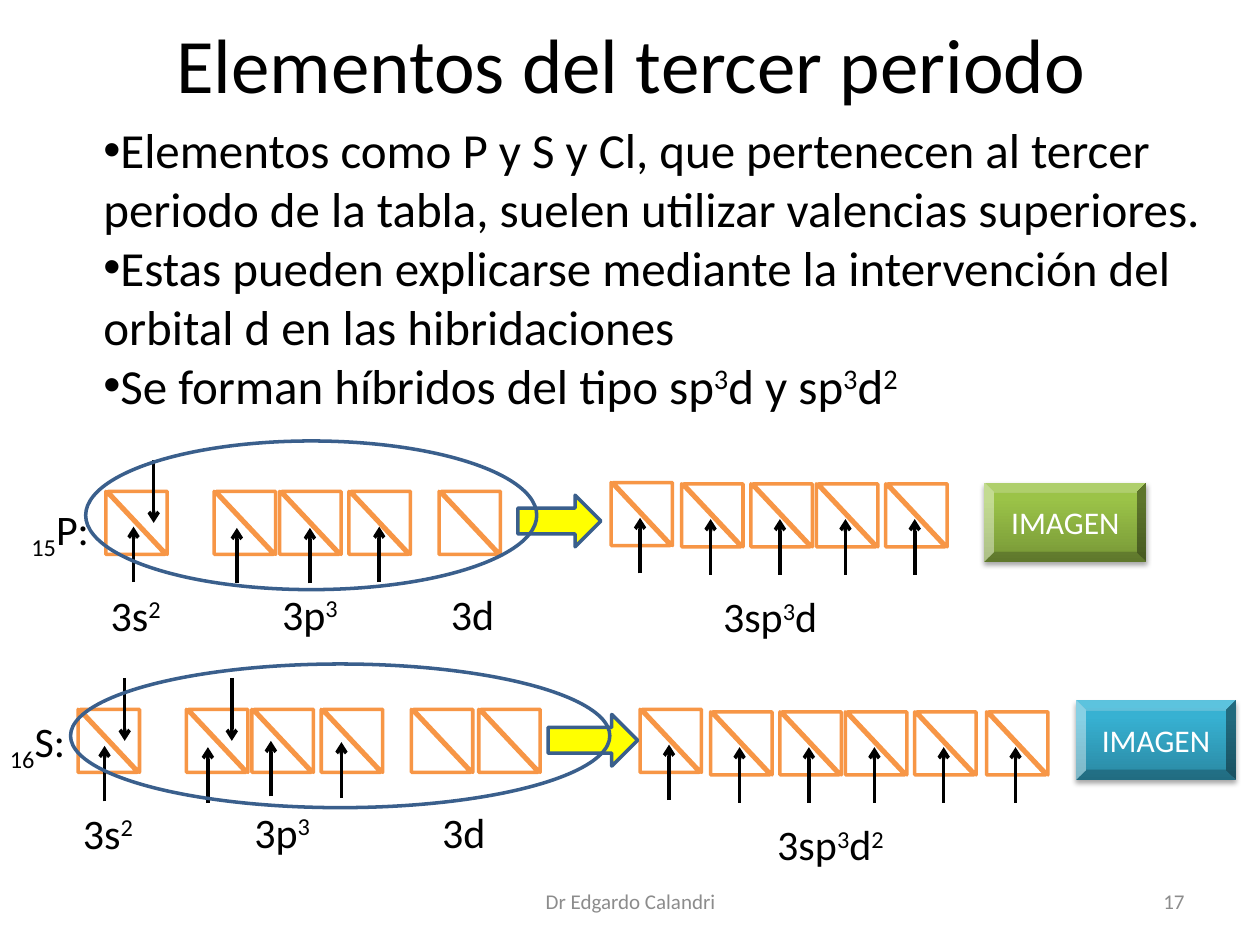
from copy import deepcopy
from dataclasses import dataclass

from lxml import etree
from pptx import Presentation
from pptx.dml.color import RGBColor
from pptx.enum.shapes import MSO_CONNECTOR, MSO_SHAPE
from pptx.enum.text import MSO_ANCHOR, MSO_AUTO_SIZE, PP_ALIGN
from pptx.oxml.ns import qn
from pptx.util import Inches, Pt

LEFT, CENTER, RIGHT = PP_ALIGN.LEFT, PP_ALIGN.CENTER, PP_ALIGN.RIGHT
TOP, MIDDLE = MSO_ANCHOR.TOP, MSO_ANCHOR.MIDDLE
FIXED = MSO_AUTO_SIZE.NONE
TRIANGLE, ELLIPSE = MSO_SHAPE.RIGHT_TRIANGLE, MSO_SHAPE.OVAL
BLOCK_ARROW, BEVEL = MSO_SHAPE.RIGHT_ARROW, MSO_SHAPE.BEVEL
STRAIGHT = MSO_CONNECTOR.STRAIGHT

# The slide is a grid of 100 columns by 75 rows
WIDTH, HEIGHT = Inches(10), Inches(7.5)
COL, ROW = WIDTH / 100, HEIGHT / 75
UP, DOWN = (7.2, 2.8), (-2.5, 2.5)  # rows where an electron starts and ends
ORBITAL_COLS = (0, 8.6, 13.8, 19.3, 26.45, 31.8)
HYBRID_COLS = (0, 5.6, 11.1, 16.3, 21.8, 27.5)


@dataclass(frozen=True)
class Theme:
    font: str = "Calibri"
    ink: str = "000000"
    muted: str = "8C8C8C"
    paper: str = "FFFFFF"
    orbital: str = "F79646"
    outline: str = "3A5F8C"
    arrow: str = "FFFF00"
    green: tuple = ("779737", "9BC348", "9DC746")
    blue: tuple = ("2A88A2", "37B1D2", "34B4D6")
    title: int = 44
    body: int = 28
    label: int = 24
    button: int = 18
    footer: int = 12
    line: int = 2


THEME = Theme()


def color(code):
    return RGBColor.from_string(code)


def cells(left, top, width, height):
    return [round(n) for n in (left * COL, top * ROW, width * COL, height * ROW)]


def place(shape, box):
    for side, length in zip(("left", "top", "width", "height"), cells(*box)):
        setattr(shape, side, length)


def write(paragraph, runs, size, ink=THEME.ink, align=LEFT):
    """Write (text, baseline percent) runs into one paragraph."""
    paragraph.alignment = align
    for text, baseline in runs:
        run = paragraph.add_run()
        run.text = text
        style = {"name": THEME.font, "size": Pt(size)}
        for key, value in style.items():
            setattr(run.font, key, value)
        run.font.color.rgb = color(ink)
        if baseline:
            run._r.get_or_add_rPr().set("baseline", str(baseline * 1000))


def set_frame(frame, **settings):
    for key, value in settings.items():
        setattr(frame, key, value)


def add_label(slide, box, runs, size=THEME.label, ink=THEME.ink,
              align=LEFT, anchor=TOP, wrap=False):
    label = slide.shapes.add_textbox(*cells(*box))
    set_frame(label.text_frame, word_wrap=wrap, vertical_anchor=anchor)
    write(label.text_frame.paragraphs[0], runs, size, ink, align)


def add_outline(shapes, kind, box, line, fill=None):
    shape = shapes.add_shape(kind, *cells(*box))
    shape.shadow.inherit = False
    shape.line.color.rgb = color(line)
    shape.line.width = Pt(THEME.line)
    if fill:
        shape.fill.solid()
        shape.fill.fore_color.rgb = color(fill)
    else:
        shape.fill.background()
    return shape


def add_orbital(slide, left, top):
    """A square cut by its diagonal, made of two right triangles."""
    group = slide.shapes.add_group_shape()
    for shift, turn in ((0, 0), (0.17, 180)):
        half = add_outline(group.shapes, TRIANGLE, (left + shift, top, 4.7, 5),
                           THEME.orbital, THEME.paper)
        half.rotation = turn


def add_electron(slide, left, top, span):
    x, start, end = round(left * COL), *(round((top + row) * ROW) for row in span)
    electron = slide.shapes.add_connector(STRAIGHT, x, start, x, end)
    electron.line.color.rgb = color(THEME.ink)
    electron.line.width = Pt(THEME.line)
    etree.SubElement(electron.line._get_or_add_ln(), qn("a:tailEnd"), type="arrow")
    etree.SubElement(electron._element.spPr, qn("a:effectLst"))


def add_button(slide, box, shades):
    button = slide.shapes.add_shape(BEVEL, *cells(*box))
    button.line.fill.background()
    button.fill.gradient()
    button.fill.gradient_angle = 90
    properties = button._element.spPr
    stops = properties.find(".//" + qn("a:gsLst"))
    stops.append(deepcopy(stops[-1]))
    for stop, shade, position in zip(button.fill.gradient_stops, shades, (0, 0.8, 1)):
        stop.color.rgb = color(shade)
        stop.position = position
    # Soft shadow below the button
    button.shadow.inherit = False
    shadow = etree.SubElement(
        properties.find(qn("a:effectLst")), qn("a:outerShdw"), blurRad=str(Pt(3.1)),
        dist=str(Pt(1.8)), dir="5400000", rotWithShape="0")
    black = etree.SubElement(shadow, qn("a:srgbClr"), val=THEME.ink)
    etree.SubElement(black, qn("a:alpha"), val="35000")
    button.text_frame.vertical_anchor = MIDDLE
    write(button.text_frame.paragraphs[0], [("IMAGEN", 0)], THEME.button, THEME.paper, CENTER)


def add_title(slide, box):
    title = slide.shapes.title
    place(title, box)
    set_frame(title.text_frame, auto_size=FIXED, vertical_anchor=MIDDLE)
    write(title.text_frame.paragraphs[0], [("Elementos del tercer periodo", 0)],
          THEME.title, align=CENTER)


def add_body(slide, box):
    body = slide.placeholders[1]
    place(body, box)
    frame = body.text_frame
    set_frame(frame, auto_size=FIXED, vertical_anchor=TOP)
    points = (
        [("Elementos como P y S y Cl, que pertenecen al tercer periodo de la tabla, "
          "suelen utilizar valencias superiores.", 0)],
        [("Estas pueden explicarse mediante la intervención del orbital d en las "
          "hibridaciones", 0)],
        [("Se forman híbridos del tipo sp", 0), ("3", 30), ("d y sp", 0), ("3", 30),
         ("d", 0), ("2", 30)],
    )
    for index, runs in enumerate(points):
        point = frame.add_paragraph() if index else frame.paragraphs[0]
        point.space_before = Pt(0)
        layout = point._p.get_or_add_pPr()
        layout.set("marL", str(Inches(0.38)))
        layout.set("indent", "0")
        etree.SubElement(layout, qn("a:buChar"), char="•")
        write(point, runs, THEME.body)


def add_hybridization(slide, left, top, element):
    """One element: its orbitals, the hybrids they form and a button."""
    def inside(box):
        return (left + box[0], top + box[1], *box[2:])

    # Valence orbitals and their electrons
    for column in ORBITAL_COLS[:element["orbitals"]]:
        add_orbital(slide, left + column, top)
    for column, shift, span in element["electrons"]:
        add_electron(slide, left + column, top + shift, span)

    # Hybrid orbitals with one electron each
    hybrid_left, hybrid_top, drop = element["hybrids"]
    for index, column in enumerate(HYBRID_COLS[:element["hybrid_count"]]):
        x, y = left + hybrid_left + column, top + hybrid_top + (drop if index else 0)
        add_orbital(slide, x, y)
        add_electron(slide, x + 2.3, y, UP)

    # Labels, block arrow, ellipse and button
    for box, runs in element["labels"]:
        add_label(slide, inside(box), runs)
    add_outline(slide.shapes, BLOCK_ARROW, inside(element["arrow"]), THEME.outline, THEME.arrow)
    add_outline(slide.shapes, ELLIPSE, inside(element["ellipse"]), THEME.outline)
    add_button(slide, inside(element["button"]), element["shades"])


S_P_LABELS = [((-0.6, 7.3, 6.2, 5), [("3s", 0), ("2", 30)]),
              ((13, 7.2, 6.6, 5), [("3p", 0), ("3", 30)])]
PHOSPHORUS = {
    "orbitals": 5, "hybrid_count": 5, "hybrids": (40.1, -0.7, 0.1),
    "electrons": [(3.8, 0, DOWN), (2.2, 0, UP), (10.4, 0.1, UP), (16.2, 0.1, UP),
                  (21.7, 0, UP)],
    "labels": S_P_LABELS + [
        ((26.4, 7.2, 5.5, 5), [("3d", 0)]),
        ((-6.9, 0.5, 6.9, 5), [("15", -25), ("P:", 0)]),
        ((48, 7.4, 9.7, 5), [("3sp", 0), ("3", 30), ("d", 0)])],
    "arrow": (32.7, 0.3, 6.6, 4.1), "ellipse": (-1.6, -4, 35.8, 11.8),
    "button": (69.7, -0.7, 12.9, 6.3), "shades": THEME.green,
}
SULFUR = {
    "orbitals": 6, "hybrid_count": 6, "hybrids": (44.6, 0, 0.2),
    "electrons": [(3.7, 0, DOWN), (2.1, 0.1, UP), (12.2, 0, DOWN), (10.3, 0.2, UP),
                  (15.3, -0.3, UP), (20.9, -0.2, UP)],
    "labels": S_P_LABELS + [
        ((27.9, 7.2, 5.5, 5), [("3d", 0)]),
        ((-6.4, 0, 6.7, 5), [("16", -25), ("S:", 0)]),
        ((54.5, 8.2, 10.9, 5), [("3sp", 0), ("3", 30), ("d", 0), ("2", 30)])],
    "arrow": (37.3, 0.4, 7.1, 4.1), "ellipse": (-0.6, -3.6, 42.8, 11.4),
    "button": (79.2, -0.7, 12.7, 6.3), "shades": THEME.blue,
}


def add_footer(slide, top, height):
    for left, width, text, align in ((34.2, 31.7, "Dr Edgardo Calandri", CENTER),
                                     (71.7, 23.3, "17", RIGHT)):
        add_label(slide, (left, top, width, height), [(text, 0)], THEME.footer,
                  THEME.muted, align, MIDDLE, True)


def main():
    deck = Presentation()
    deck.slide_width, deck.slide_height = WIDTH, HEIGHT
    slide = deck.slides.add_slide(deck.slide_layouts[1])
    add_title(slide, (5.1, 0, 90, 9.9))
    add_body(slide, (3.4, 9, 94.7, 26))
    add_hybridization(slide, 8.4, 39, PHOSPHORUS)
    add_hybridization(slide, 6.2, 56.3, SULFUR)
    add_footer(slide, 69.5, 4)
    deck.save("out.pptx")


if __name__ == "__main__":
    main()
